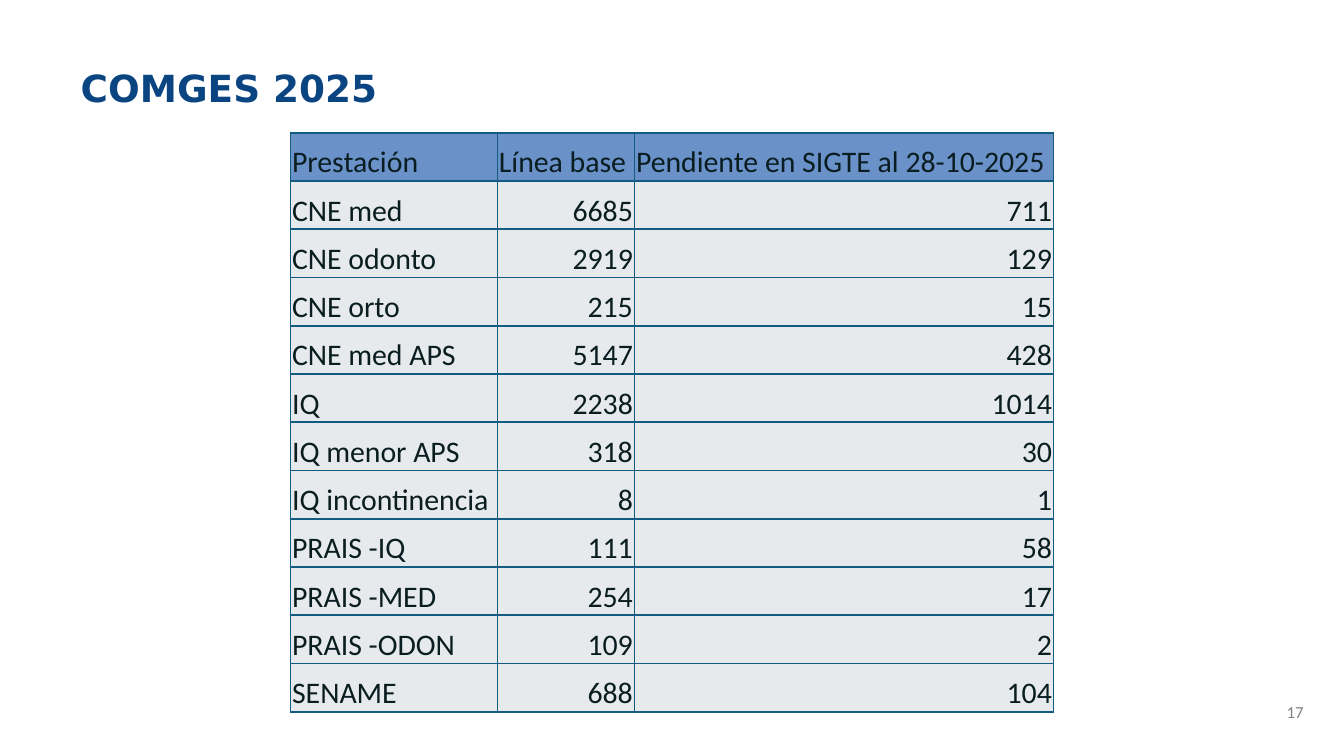
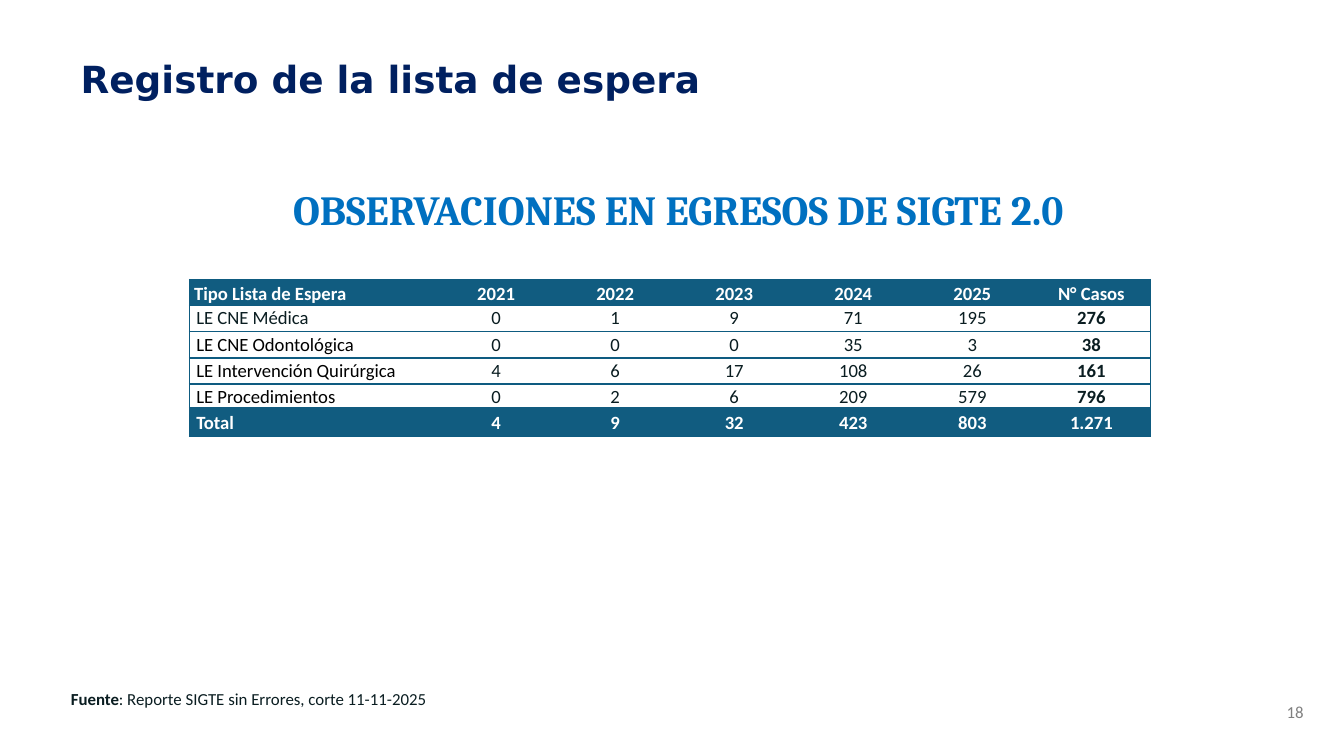
import pptx
import pptx.dml.color
import pptx.enum.text
import pptx.oxml.ns
import pptx.util
from lxml import etree

Cm = pptx.util.Cm
Pt = pptx.util.Pt
RGB = pptx.dml.color.RGBColor
Align = pptx.enum.text.PP_ALIGN
Anchor = pptx.enum.text.MSO_ANCHOR
Fit = pptx.enum.text.MSO_AUTO_SIZE

INK = RGB(0x0A, 0x1D, 0x21)
BLACK = RGB(0, 0, 0)
WHITE = RGB(255, 255, 255)
GRAY = RGB(0x80, 0x80, 0x80)
BLUE = RGB(0x0B, 0x45, 0x81)
NAVY = RGB(0x00, 0x20, 0x60)
SKY = RGB(0x00, 0x70, 0xC0)
HEAD = RGB(0x6A, 0x92, 0xC9)
PALE = RGB(0xE7, 0xEA, 0xED)
TEAL = RGB(0x11, 0x5C, 0x80)
EDGE = RGB(0x0E, 0x5B, 0x80)

GOALS = [
    ("Prestación", "Línea base", "Pendiente en SIGTE al 28-10-2025"),
    ("CNE med", "6685", "711"),
    ("CNE odonto", "2919", "129"),
    ("CNE orto", "215", "15"),
    ("CNE med APS", "5147", "428"),
    ("IQ", "2238", "1014"),
    ("IQ menor APS", "318", "30"),
    ("IQ incontinencia", "8", "1"),
    ("PRAIS -IQ", "111", "58"),
    ("PRAIS -MED", "254", "17"),
    ("PRAIS -ODON", "109", "2"),
    ("SENAME", "688", "104"),
]
CASES = [
    ("Tipo Lista de Espera", "2021", "2022", "2023", "2024", "2025", "N° Casos"),
    ("LE CNE Médica", "0", "1", "9", "71", "195", "276"),
    ("LE CNE Odontológica", "0", "0", "0", "35", "3", "38"),
    ("LE Intervención Quirúrgica", "4", "6", "17", "108", "26", "161"),
    ("LE Procedimientos", "0", "2", "6", "209", "579", "796"),
    ("Total", "4", "9", "32", "423", "803", "1.271"),
]


class Deck:
    def __init__(self):
        self.prs = pptx.Presentation()
        self.prs.slide_width = Cm(25.4)
        self.prs.slide_height = Cm(14.29)
        self.slide = None

    def label(self, par, text, size, color, bold=False, align=Align.LEFT,
              font="Calibri"):
        par.text = text
        par.alignment = align
        par.font.name = font
        par.font.size = Pt(size)
        par.font.bold = bold
        par.font.color.rgb = color

    def page(self, title, color, top, number):
        self.slide = self.prs.slides.add_slide(self.prs.slide_layouts[5])
        head = self.slide.shapes.title
        head.left, head.top = Cm(1.27), Cm(top)
        head.width, head.height = Cm(17.91), Cm(1.14)
        frame = head.text_frame
        frame.auto_size = Fit.NONE
        frame.vertical_anchor = Anchor.MIDDLE
        self.label(frame.paragraphs[0], title, 20, color, True,
                   font="DejaVu Sans")
        foot = self.box(18.97, 13.16, 5.92, 0.58)
        foot.vertical_anchor = Anchor.MIDDLE
        self.label(foot.paragraphs[0], number, 9, GRAY, align=Align.RIGHT)

    def box(self, left, top, width, height, wrap=True):
        shape = self.slide.shapes.add_textbox(
            Cm(left), Cm(top), Cm(width), Cm(height))
        shape.text_frame.word_wrap = wrap
        return shape.text_frame

    def table(self, left, top, height, widths, rows):
        grid = self.slide.shapes.add_table(
            len(rows), len(widths), Cm(left), Cm(top),
            Cm(sum(widths)), Cm(height)).table
        for col, width in zip(grid.columns, widths):
            col.width = Cm(width)
        return grid

    def cell(self, cell, fill, lines, left=0, right=0, anchor=Anchor.BOTTOM):
        """Set fill, insets and borders; lines maps a side to (colour, points)."""
        cell.margin_left, cell.margin_right = Cm(left), Cm(right)
        cell.margin_top = cell.margin_bottom = 0
        cell.vertical_anchor = anchor
        props = cell._tc.get_or_add_tcPr()
        qn = pptx.oxml.ns.qn
        for side in "LRTB":
            line = etree.SubElement(props, qn("a:ln" + side))
            if side in lines:
                color, width = lines[side]
                line.set("w", str(Pt(width)))
                paint = etree.SubElement(line, qn("a:solidFill"))
                etree.SubElement(paint, qn("a:srgbClr")).set("val", str(color))
            else:
                etree.SubElement(line, qn("a:noFill"))
        cell.fill.solid()
        cell.fill.fore_color.rgb = fill


def goals(deck):
    deck.page("COMGES 2025", BLUE, 1.09, "17")
    grid = deck.table(5.49, 2.51, 10.95, [3.91, 2.59, 7.92], GOALS)
    lines = dict.fromkeys("LRTB", (TEAL, 1))
    for r, row in enumerate(GOALS):
        for c, text in enumerate(row):
            cell = grid.cell(r, c)
            deck.cell(cell, PALE if r else HEAD, lines, 0.03, 0.03)
            deck.label(cell.text_frame.paragraphs[0], text, 16, INK,
                       align=Align.RIGHT if r and c else Align.LEFT)


def cases(deck):
    deck.page("Registro de la lista de espera", NAVY, 0.91, "18")
    frame = deck.box(4.14, 3.35, 17.07, 1.8)
    frame.margin_left = Cm(0.55)
    deck.label(frame.paragraphs[0], "OBSERVACIONES EN EGRESOS DE SIGTE 2.0",
               22.2, SKY, True, Align.CENTER, "Cambria")

    grid = deck.table(3.58, 5.28, 2.97, [4.67] + [2.25] * 6, CASES)
    last, end = len(CASES) - 1, len(CASES[0]) - 1
    thin, thick = (EDGE, 0.75), (TEAL, 4)
    for r, row in enumerate(CASES):
        band = r in (0, last)
        for c, text in enumerate(row):
            lines = {"T": thick if r == last else thin,
                     "B": thick if r == last - 1 else thin}
            if c == 0:
                lines["L"] = thin
            if c == end:
                lines["R"] = thin
            inset = 0 if c else 0.13 if r else 0.09
            cell = grid.cell(r, c)
            deck.cell(cell, TEAL if band else WHITE, lines, inset,
                      anchor=Anchor.MIDDLE if r else Anchor.BOTTOM)
            ink = WHITE if band else BLACK if c == 0 and r > 1 else INK
            deck.label(cell.text_frame.paragraphs[0], text, 10, ink,
                       band or c == end, Align.CENTER if c else Align.LEFT)

    par = deck.box(1.09, 12.9, 7.29, 0.64, wrap=False).paragraphs[0]
    deck.label(par, "Fuente", 9, INK)
    par.runs[0].font.bold = True
    par.add_run().text = ": Reporte SIGTE sin Errores, corte 11-11-2025"


def main():
    deck = Deck()
    goals(deck)
    cases(deck)
    deck.prs.save("out.pptx")


if __name__ == "__main__":
    main()
